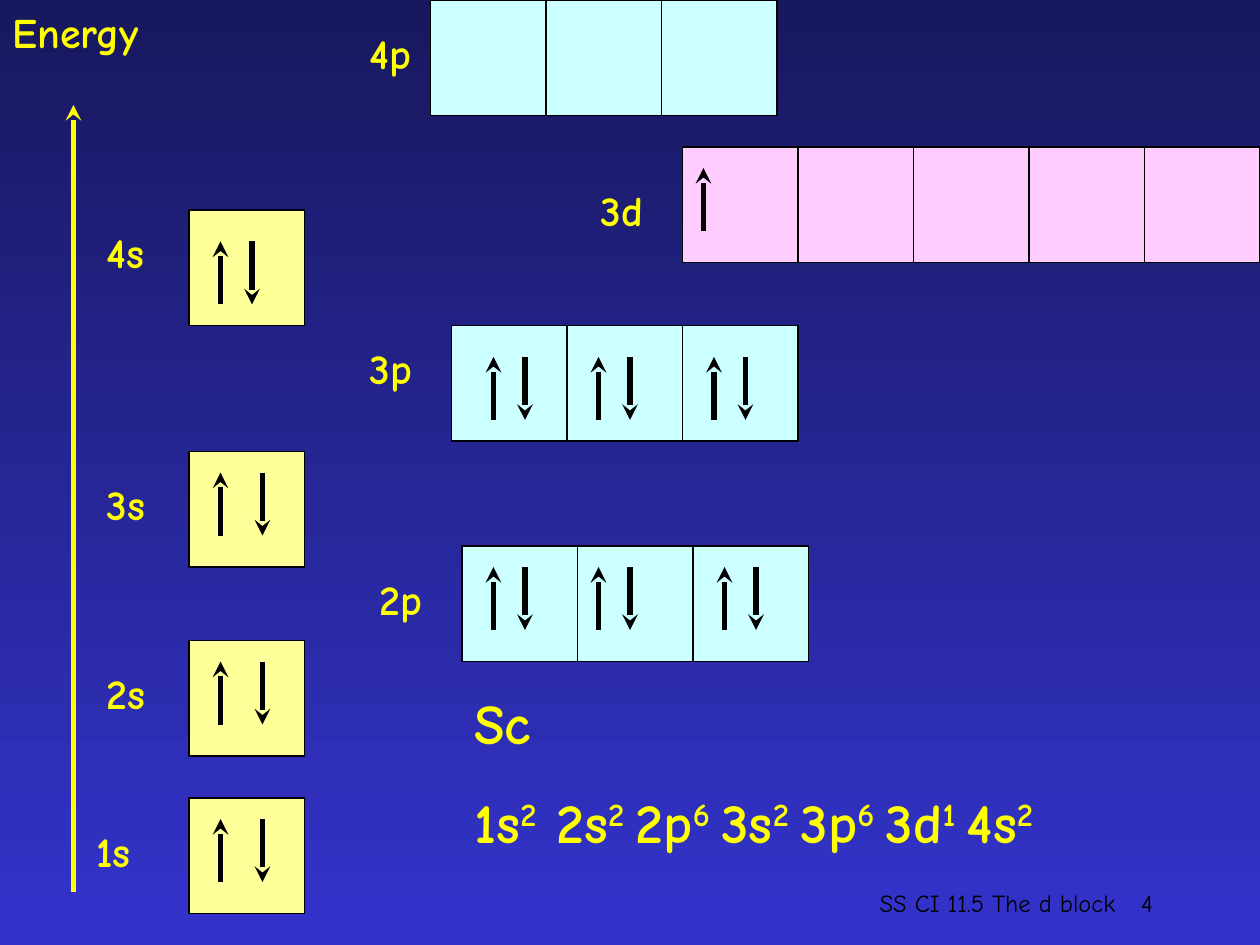
from lxml import etree
from pptx import Presentation
from pptx.dml.color import RGBColor
from pptx.enum.shapes import MSO_CONNECTOR, MSO_SHAPE
from pptx.enum.text import MSO_ANCHOR, PP_ALIGN
from pptx.oxml.ns import qn
from pptx.util import Pt

NIGHT = RGBColor(0x18, 0x18, 0x5E)
BLUE = RGBColor(0x33, 0x33, 0xCC)
YELLOW = RGBColor(0xFF, 0xFF, 0x00)
BLACK = RGBColor(0x00, 0x00, 0x00)
CREAM = RGBColor(0xFF, 0xFF, 0x99)
CYAN = RGBColor(0xCC, 0xFF, 0xFF)
PINK = RGBColor(0xFF, 0xCC, 0xFF)

LABEL = {"name": "Comic Neue", "size": Pt(24), "bold": True}
HEADING = {"name": "Comic Neue", "size": Pt(32), "bold": True}
FOOTER = {"name": "Comic Neue", "size": Pt(14), "bold": False}

CELL = 66  # side of one orbital box
SPIN = 36  # length of one electron arrow

# Subshell: name, fill, left, top, boxes, label offset and width,
# top of the arrows, gap within a pair, offsets of the up arrows
SUBSHELLS = [
    ("1s", CREAM, 108, 456, 1, (-60, 12, 54), 12, 24, [18]),
    ("2s", CREAM, 108, 366, 1, (-54, 12, 48), 12, 24, [18]),
    ("3s", CREAM, 108, 258, 1, (-54, 12, 48), 12, 24, [18]),
    ("4s", CREAM, 108, 120, 1, (-54, 6, 42), 18, 18, [18]),
    ("2p", CYAN, 264, 312, 3, (-54, 12, 54), 12, 18, [18, 78, 150]),
    ("3p", CYAN, 258, 186, 3, (-54, 6, 48), 18, 18, [24, 84, 150]),
    ("3d", PINK, 390, 84, 5, (-54, 18, 54), 12, None, [12]),
    ("4p", CYAN, 246, 0, 3, (-42, 12, 48), 0, None, []),
]
CONFIGURATION = [("1s", "2"), (" 2s", "2 "), ("2p", "6 "), ("3s", "2 "),
                 ("3p", "6 "), ("3d", "1 "), ("4s", "2")]


def add_run(paragraph, text, style, color, baseline=None):
    run = paragraph.add_run()
    run.text = text
    for name, value in style.items():
        setattr(run.font, name, value)
    run.font.color.rgb = color
    if baseline:
        run.font._element.set("baseline", str(baseline))


def add_text_box(slide, left, top, width, height, anchor=MSO_ANCHOR.TOP):
    box = slide.shapes.add_textbox(Pt(left), Pt(top), Pt(width), Pt(height))
    box.text_frame.word_wrap = True
    box.text_frame.vertical_anchor = anchor
    return box.text_frame


def add_label(slide, text, left, top, width):
    frame = add_text_box(slide, left, top, width, 36)
    add_run(frame.paragraphs[0], text, LABEL, YELLOW)


def add_arrow(slide, x, start, end, color):
    arrow = slide.shapes.add_connector(
        MSO_CONNECTOR.STRAIGHT, Pt(x), Pt(start), Pt(x), Pt(end))
    arrow.line.width = Pt(3)
    arrow.line.color.rgb = color
    etree.SubElement(arrow.line._get_or_add_ln(), qn("a:tailEnd"), type="stealth")
    etree.SubElement(arrow._element.spPr, qn("a:effectLst"))


def add_subshell(slide, name, fill, left, top, count, label, spin_top, gap, ups):
    # Row of boxes
    for index in range(count):
        box = slide.shapes.add_shape(
            MSO_SHAPE.RECTANGLE, Pt(left + index * CELL), Pt(top), Pt(CELL), Pt(CELL))
        box.shadow.inherit = False
        box.fill.solid()
        box.fill.fore_color.rgb = fill
        box.line.color.rgb = BLACK
        box.line.width = Pt(0.75)

    # Name to the left
    label_x, label_y, label_width = label
    add_label(slide, name, left + label_x, top + label_y, label_width)

    # Electrons, paired where a gap is given
    high = top + spin_top
    low = high + SPIN
    for offset in ups:
        add_arrow(slide, left + offset, low, high, BLACK)
        if gap:
            add_arrow(slide, left + offset + gap, high, low, BLACK)


def add_energy_axis(slide, left, top, height):
    add_label(slide, "Energy", left, top, 198)
    add_arrow(slide, left + 42, top + height, top + 60, YELLOW)


def add_configuration(slide, left, top, width, height):
    frame = add_text_box(slide, left, top, width, height)
    add_run(frame.paragraphs[0], "Sc", HEADING, YELLOW)
    paragraph = frame.add_paragraph()
    paragraph.space_before = Pt(18)
    for subshell, electrons in CONFIGURATION:
        add_run(paragraph, subshell, HEADING, YELLOW)
        add_run(paragraph, electrons, HEADING, YELLOW, baseline=30000)


def add_footer(slide, left, top, height):
    parts = [("SS CI 11.5 The d block", 0, 228, PP_ALIGN.CENTER),
             ("4", 60, 150, PP_ALIGN.RIGHT)]
    for text, offset, width, alignment in parts:
        frame = add_text_box(slide, left + offset, top, width, height,
                             MSO_ANCHOR.BOTTOM)
        frame.paragraphs[0].alignment = alignment
        add_run(frame.paragraphs[0], text, FOOTER, BLACK)


def set_background(slide):
    fill = slide.background.fill
    fill.gradient()
    fill.gradient_angle = 270
    for stop, position, color in zip(fill.gradient_stops, (0, 1), (NIGHT, BLUE)):
        stop.position = position
        stop.color.rgb = color


def main():
    presentation = Presentation()
    presentation.slide_width = Pt(720)
    presentation.slide_height = Pt(540)
    slide = presentation.slides.add_slide(presentation.slide_layouts[6])
    set_background(slide)
    add_footer(slide, 456, 492, 36)
    add_energy_axis(slide, 0, 0, 510)
    for subshell in SUBSHELLS:
        add_subshell(slide, *subshell)
    add_configuration(slide, 264, 390, 480, 103)
    presentation.save("out.pptx")


if __name__ == "__main__":
    main()
